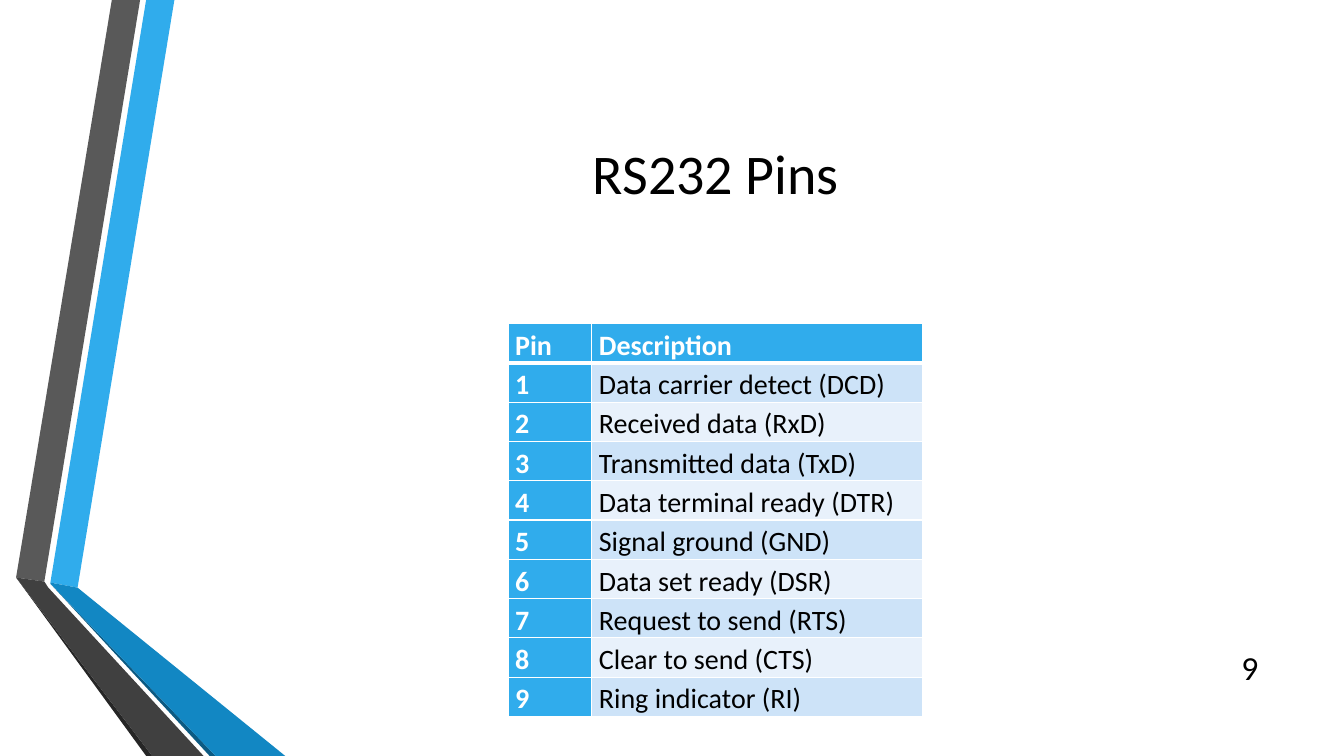
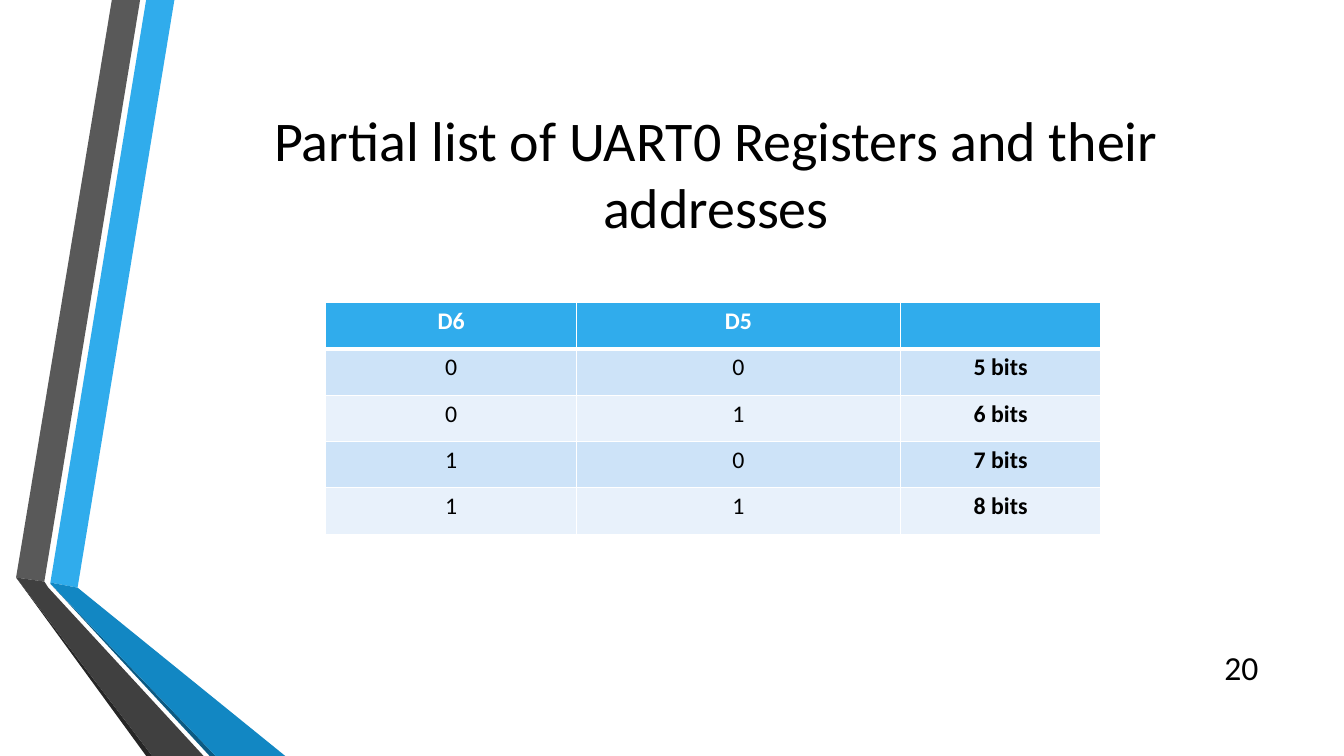
"""Build two slides on serial port pins and UART registers."""
from dataclasses import dataclass

from lxml.etree import SubElement
from pptx import Presentation
from pptx.dml.color import RGBColor
from pptx.enum.text import MSO_ANCHOR, MSO_AUTO_SIZE, PP_ALIGN
from pptx.oxml.ns import qn
from pptx.presentation import Presentation as Deck
from pptx.slide import Slide
from pptx.table import _Cell as Cell
from pptx.text.text import TextFrame
from pptx.util import Inches, Pt

FONT = "Calibri"
BLACK = RGBColor(0x00, 0x00, 0x00)
WHITE = RGBColor(0xFF, 0xFF, 0xFF)
SKY = RGBColor(0x30, 0xAC, 0xEC)
BLUE = RGBColor(0x12, 0x87, 0xC3)
NAVY = RGBColor(0x0C, 0x5A, 0x82)
GREY = RGBColor(0x59, 0x59, 0x59)
CHARCOAL = RGBColor(0x40, 0x40, 0x40)
SOOT = RGBColor(0x26, 0x26, 0x26)
BANDS = (RGBColor(0xCD, 0xE3, 0xF8), RGBColor(0xE8, 0xF1, 0xFB))


@dataclass(frozen=True)
class Ribbon:
    """A filled outline of the side decoration, in inches."""

    color: RGBColor
    points: tuple[tuple[float, float], ...]


@dataclass(frozen=True)
class TableSpec:
    """The content and look of one table."""

    left: float
    top: float
    widths: tuple[float, ...]
    row_height: float
    size: int
    align: PP_ALIGN
    rows: tuple[tuple[str, ...], ...]
    bold_column: int
    accent_column: bool = False


@dataclass(frozen=True)
class Page:
    """One slide with a title, a number and a table."""

    title: str
    number: int
    table: TableSpec


RIBBONS = (
    Ribbon(SKY, ((0.5, 5.78), (0.77, 5.83), (1.73, 0), (1.45, 0))),
    Ribbon(GREY, ((1.39, 0), (1.11, 0), (0.16, 5.73), (0.44, 5.77))),
    Ribbon(SOOT, ((0.16, 5.73), (1.45, 7.5), (1.51, 7.5))),
    Ribbon(NAVY, ((0.5, 5.79), (2.08, 7.5), (2.14, 7.5))),
    Ribbon(BLUE, ((0.5, 5.79), (2.14, 7.5), (2.83, 7.5), (0.77, 5.83), (0.5, 5.78))),
    Ribbon(CHARCOAL, ((2.02, 7.5), (0.48, 5.83), (0.44, 5.77), (0.16, 5.73), (1.51, 7.5))),
)

PIN_NAMES = (
    "Data carrier detect (DCD)",
    "Received data (RxD)",
    "Transmitted data (TxD)",
    "Data terminal ready (DTR)",
    "Signal ground (GND)",
    "Data set ready (DSR)",
    "Request to send (RTS)",
    "Clear to send (CTS)",
    "Ring indicator (RI)",
)
PIN_ROWS = tuple((str(pin), name) for pin, name in enumerate(PIN_NAMES, 1))

PAGES = (
    Page(
        "RS232 Pins",
        9,
        TableSpec(5.04, 3.21, (0.83, 3.28), 0.39, 20, PP_ALIGN.LEFT,
                  (("Pin", "Description"), *PIN_ROWS), 0, True),
    ),
    Page(
        "Partial list of UART0 Registers and their addresses",
        20,
        TableSpec(3.23, 3, (2.49, 3.21, 1.99), 0.46, 17, PP_ALIGN.CENTER,
                  (("D6", "D5", ""), ("0", "0", "5 bits"), ("0", "1", "6 bits"),
                   ("1", "0", "7 bits"), ("1", "1", "8 bits")), 2),
    ),
)


def format_text(frame: TextFrame, size: int, align: PP_ALIGN,
                color: RGBColor = BLACK, bold: bool = False) -> None:
    """Style every paragraph of a text frame."""
    for para in frame.paragraphs:
        para.alignment = align
        for span in para.runs:
            span.font.name = FONT
            span.font.size = Pt(size)
            span.font.bold = bold
            span.font.color.rgb = color


def draw_ribbons(slide: Slide) -> None:
    """Draw the folded ribbons along the left edge."""
    group = slide.shapes.add_group_shape()
    for ribbon in RIBBONS:
        start, *others = [(Inches(x), Inches(y)) for x, y in ribbon.points]
        builder = group.shapes.build_freeform(*start)
        builder.add_line_segments(others, close=True)
        shape = builder.convert_to_shape()
        shape.shadow.inherit = False
        shape.fill.solid()
        shape.fill.fore_color.rgb = ribbon.color
        shape.line.fill.background()


def draw_title(slide: Slide, text: str) -> None:
    """Place and style the title placeholder."""
    title = slide.shapes.title
    title.left, title.top = Inches(1.62), Inches(0.75)
    title.width, title.height = Inches(10.96), Inches(1.92)
    frame = title.text_frame
    frame.text = text
    frame.word_wrap = True
    frame.auto_size = MSO_AUTO_SIZE.NONE
    frame.vertical_anchor = MSO_ANCHOR.MIDDLE
    format_text(frame, 40, PP_ALIGN.CENTER)


def draw_number(slide: Slide, number: int) -> None:
    """Write the slide number at the lower right."""
    box = slide.shapes.add_textbox(Inches(11.98), Inches(6.42), Inches(0.6), Inches(0.4))
    frame = box.text_frame
    frame.text = str(number)
    frame.word_wrap = True
    frame.vertical_anchor = MSO_ANCHOR.MIDDLE
    format_text(frame, 24, PP_ALIGN.RIGHT)


def set_borders(cell: Cell, top: int, bottom: int) -> None:
    """Give a cell white borders, with widths in points."""
    properties = cell._tc.get_or_add_tcPr()
    widths = {"a:lnL": 1, "a:lnR": 1, "a:lnT": top, "a:lnB": bottom}
    for index, (tag, width) in enumerate(widths.items()):
        line = SubElement(properties, qn(tag), w=str(Pt(width)))
        SubElement(SubElement(line, qn("a:solidFill")), qn("a:srgbClr"), val=str(WHITE))
        properties.insert(index, line)


def draw_table(slide: Slide, spec: TableSpec) -> None:
    """Draw a banded table with a coloured header row."""
    table = slide.shapes.add_table(
        len(spec.rows), len(spec.widths), Inches(spec.left), Inches(spec.top),
        Inches(sum(spec.widths)), Inches(spec.row_height * len(spec.rows)),
    ).table
    for column, width in zip(table.columns, spec.widths):
        column.width = Inches(width)
    for row_index, texts in enumerate(spec.rows):
        table.rows[row_index].height = Inches(spec.row_height)
        header = row_index == 0
        for column_index, text in enumerate(texts):
            accent = header or (spec.accent_column and column_index == 0)
            cell = table.cell(row_index, column_index)
            cell.margin_left = cell.margin_right = Inches(0.07)
            cell.margin_top = cell.margin_bottom = Inches(0)
            cell.fill.solid()
            cell.fill.fore_color.rgb = SKY if accent else BANDS[(row_index - 1) % 2]
            set_borders(cell, 3 if row_index == 1 else 1, 3 if header else 1)
            cell.text_frame.text = text
            cell.text_frame.paragraphs[0].line_spacing = 1.15
            format_text(cell.text_frame, spec.size, spec.align,
                        WHITE if accent else BLACK,
                        header or column_index == spec.bold_column)


def add_page(deck: Deck, page: Page) -> None:
    """Add one complete slide."""
    slide = deck.slides.add_slide(deck.slide_layouts.get_by_name("Title Only"))
    draw_ribbons(slide)
    draw_title(slide, page.title)
    draw_number(slide, page.number)
    draw_table(slide, page.table)


def main() -> None:
    """Build and save the deck."""
    deck = Presentation()
    deck.slide_width, deck.slide_height = Inches(13.33), Inches(7.5)
    for page in PAGES:
        add_page(deck, page)
    deck.save("out.pptx")


if __name__ == "__main__":
    main()
